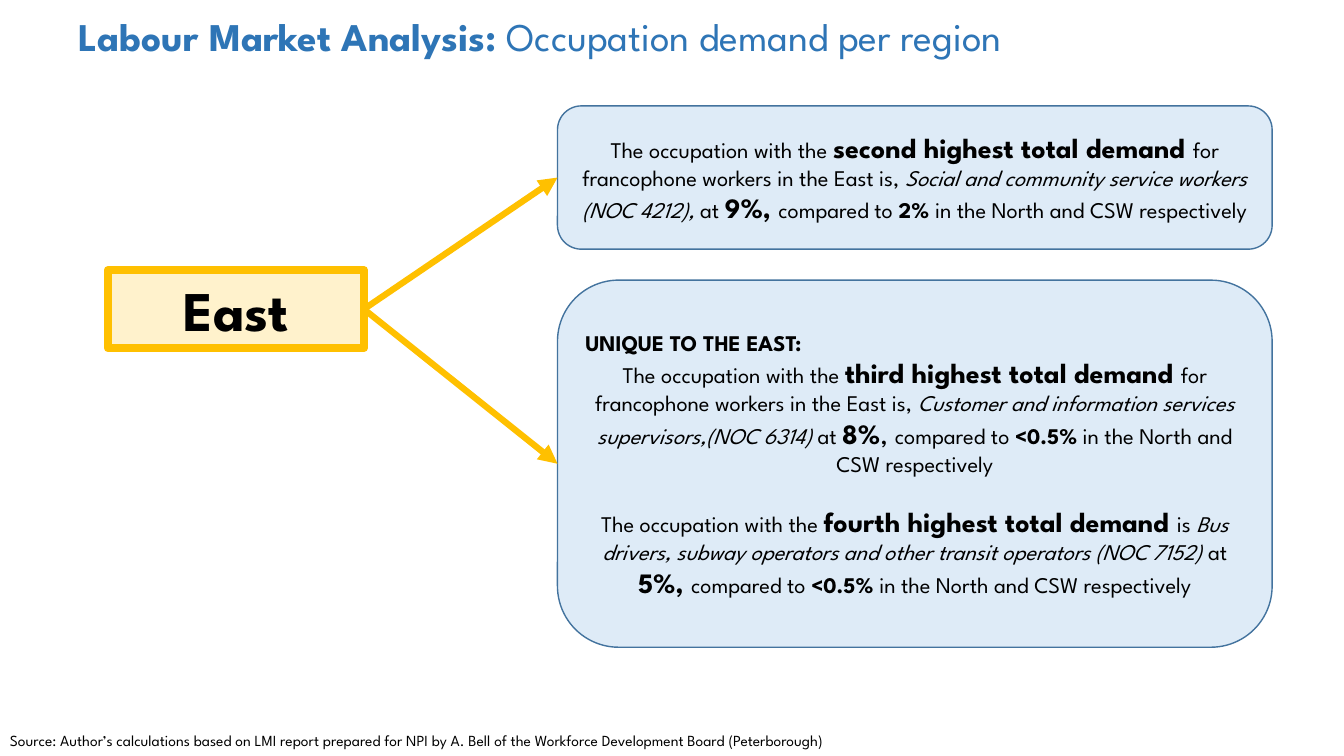
from lxml.etree import SubElement
from pptx import Presentation
from pptx.dml.color import RGBColor
from pptx.enum.shapes import MSO_CONNECTOR as Connector, MSO_SHAPE as Preset
from pptx.enum.text import MSO_ANCHOR as Anchor, MSO_AUTO_SIZE as AutoSize, PP_ALIGN as Align
from pptx.oxml.ns import qn
from pptx.util import Cm, Pt

FONT = "League Spartan"
BLACK, BLUE, GOLD = "000000", "2E75B6", "FFC000"
CARD_LEFT, CARD_WIDTH = 14.05, 18.01

SECOND_DEMAND = [
    ("The occupation with the ", 16, ""),
    ("second highest total demand ", 20, "b"),
    ("for francophone workers in the East is, ", 16, ""),
    ("Social and community service workers (NOC 4212), ", 16, "i"),
    ("at ", 16, ""),
    ("9%, ", 20, "b"),
    ("compared to ", 16, ""),
    ("2% ", 16, "b"),
    ("in the North and CSW respectively", 16, ""),
]
UNIQUE_HEADING = [("UNIQUE TO THE EAST:", 16, "b")]
THIRD_DEMAND = [
    ("The occupation with the ", 16, ""),
    ("third highest total demand ", 20, "b"),
    ("for francophone workers in the East is, ", 16, ""),
    ("Customer and information services supervisors,(NOC 6314) ", 16, "i"),
    ("at ", 16, ""),
    ("8%", 20, "b"),
    (", ", 20, ""),
    ("compared to ", 16, ""),
    ("<0.5%", 16, "b"),
    (" in the North and CSW respectively", 16, ""),
]
FOURTH_DEMAND = [
    ("The occupation with the ", 16, ""),
    ("fourth highest total demand ", 20, "b"),
    ("is ", 16, ""),
    ("Bus drivers, subway operators and other transit operators (NOC 7152)", 16, "i"),
    (" at ", 16, ""),
    ("5%, ", 20, "b"),
    ("compared to ", 16, ""),
    ("<0.5% ", 16, "b"),
    ("in the North and CSW respectively", 16, ""),
]


def color(value):
    return RGBColor.from_string(value)


def write_paragraph(paragraph, runs, align=Align.LEFT, font_color=BLACK):
    paragraph.alignment = align
    for text, size, style in runs:
        run = paragraph.add_run()
        run.text = text
        run.font.name = FONT
        run.font.size = Pt(size)
        run.font.bold = "b" in style
        run.font.italic = "i" in style
        run.font.color.rgb = color(font_color)


def add_title(slide, runs):
    title = slide.shapes.title
    title.left, title.top, title.width, title.height = Cm(1.73), Cm(0.18), Cm(29.67), Cm(4.52)
    frame = title.text_frame
    frame.auto_size = AutoSize.NONE
    frame.vertical_anchor = Anchor.TOP
    write_paragraph(frame.paragraphs[0], runs, font_color=BLUE)


def add_box(slide, preset, left, top, width, height, fill, line, line_width):
    shape = slide.shapes.add_shape(preset, Cm(left), Cm(top), Cm(width), Cm(height))
    shape.shadow.inherit = False
    shape.fill.solid()
    shape.fill.fore_color.rgb = color(fill)
    shape.line.color.rgb = color(line)
    shape.line.width = Pt(line_width)
    shape.text_frame.word_wrap = True
    return shape


def add_region(slide, name):
    shape = add_box(slide, Preset.RECTANGLE, 2.72, 6.81, 6.45, 1.96, "FFF2CC", GOLD, 6)
    SubElement(shape.line._get_or_add_ln(), qn("a:round"))
    shape.text_frame.vertical_anchor = Anchor.TOP
    write_paragraph(shape.text_frame.paragraphs[0], [(name, 40, "b")], Align.CENTER)
    return shape


def add_card(slide, top, height):
    card = add_box(slide, Preset.ROUNDED_RECTANGLE, CARD_LEFT, top, CARD_WIDTH, height,
                   "DEEBF7", "43739E", 1)
    card.text_frame.vertical_anchor = Anchor.MIDDLE
    return card


def add_arrow(slide, start, end):
    arrow = slide.shapes.add_connector(Connector.STRAIGHT, 0, 0, 0, 0)
    arrow.begin_connect(start, 3)
    arrow.end_connect(end, 1)
    arrow.line.color.rgb = color(GOLD)
    arrow.line.width = Pt(4.5)
    SubElement(arrow.line._get_or_add_ln(), qn("a:tailEnd"), type="triangle")
    SubElement(arrow._element.spPr, qn("a:effectLst"))


def add_source(slide, text):
    box = slide.shapes.add_textbox(Cm(0), Cm(18.31), Cm(33.15), Cm(0.74))
    box.text_frame.word_wrap = True
    write_paragraph(box.text_frame.paragraphs[0], [(text, 11, "")])


def main():
    presentation = Presentation()
    presentation.slide_width, presentation.slide_height = Cm(33.87), Cm(19.05)
    slide = presentation.slides.add_slide(presentation.slide_layouts[5])

    add_title(slide, [("Labour Market Analysis: ", 28, "b"),
                      ("Occupation demand per region", 28, "")])
    region = add_region(slide, "East")

    shared_card = add_card(slide, 2.67, 3.61)
    write_paragraph(shared_card.text_frame.paragraphs[0], SECOND_DEMAND, Align.CENTER)

    unique_card = add_card(slide, 7.06, 9.25)
    frame = unique_card.text_frame
    write_paragraph(frame.paragraphs[0], UNIQUE_HEADING)
    write_paragraph(frame.add_paragraph(), THIRD_DEMAND, Align.CENTER)
    fourth = frame.add_paragraph()
    fourth.space_before = Pt(20)
    write_paragraph(fourth, FOURTH_DEMAND, Align.CENTER)

    for card in (shared_card, unique_card):
        add_arrow(slide, region, card)

    add_source(slide, "Source: Author’s calculations based on LMI report prepared for NPI "
                      "by A. Bell of the Workforce Development Board (Peterborough)")
    presentation.save("out.pptx")


if __name__ == "__main__":
    main()
